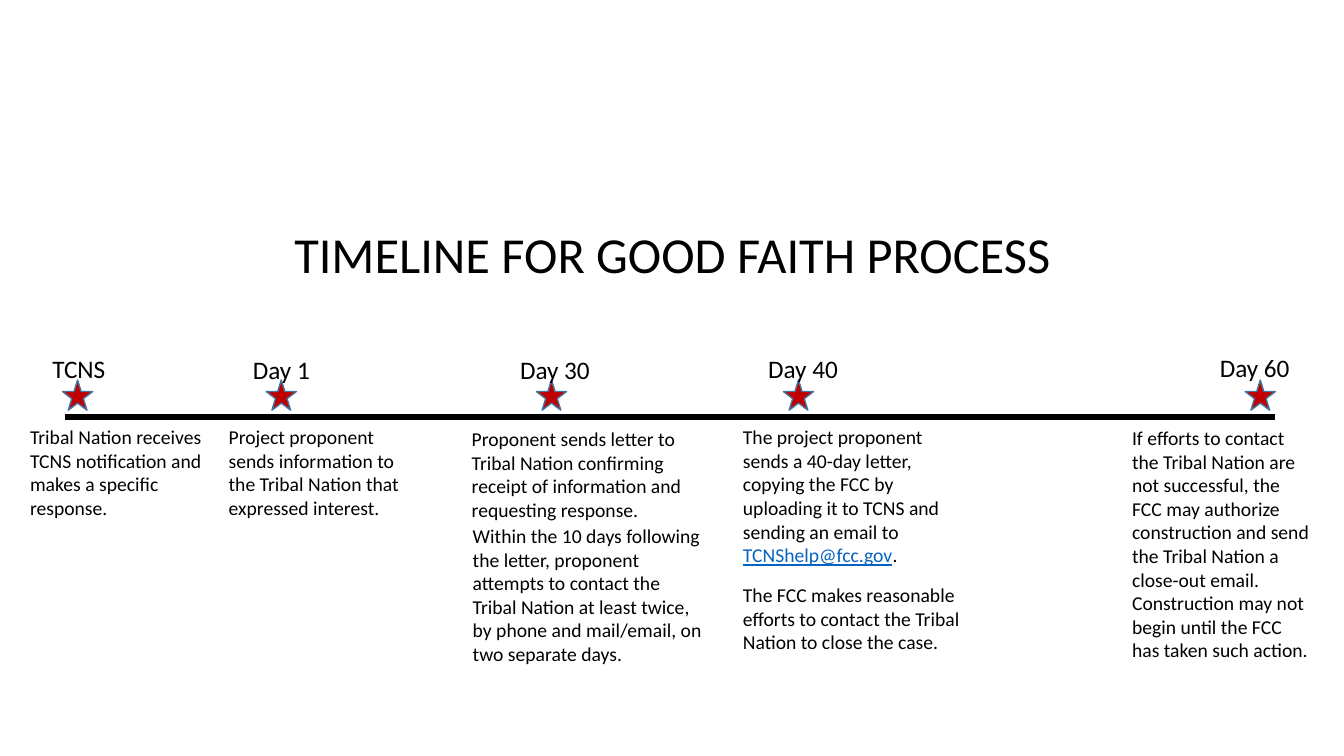
from lxml import etree
from pptx import Presentation
from pptx.dml.color import RGBColor
from pptx.enum.shapes import MSO_CONNECTOR, MSO_SHAPE
from pptx.enum.text import MSO_ANCHOR, PP_ALIGN
from pptx.oxml.ns import qn
from pptx.util import Inches, Pt

COLORS = {"text": "000000", "star": "C00000", "star_edge": "43739E", "link": "0563C1"}
STAR_SIZE, STAR_TOP, LINE_Y = 0.3, 3.77, 4.14
EMAIL = "TCNShelp@fcc.gov"

# label, star left, label box (left, top, width)
milestones = [
    ("TCNS", 0.62, (0.42, 3.46, 0.78)),
    ("Day 1", 2.64, (2.41, 3.47, 0.83)),
    ("Day 30", 5.32, (5.06, 3.47, 1.14)),
    ("Day 40", 7.77, (7.52, 3.46, 0.99)),
    ("Day 60", 12.35, (12, 3.45, 1.06)),
]

# box (left, top, width, height), paragraphs as lists of runs
descriptions = [
    ((0.2, 4.17, 2, 1.04), [
        ["Tribal Nation receives TCNS notification and"],
        ["makes a specific response."]]),
    ((2.17, 4.17, 2.07, 1.04), [
        ["Project proponent sends information to the Tribal Nation that expressed interest."]]),
    ((4.58, 4.19, 2.65, 1.04), [
        ["Proponent sends letter to Tribal Nation confirming receipt of information "
         "and requesting response."]]),
    ((4.59, 5.15, 2.52, 1.51), [
        ["Within the 10 days following the letter, proponent attempts to contact the Tribal "
         "Nation at least twice, by phone and mail/email, on two separate days."]]),
    ((7.27, 4.17, 2.41, 2.46), [
        ["The project proponent sends a 40-day letter, copying the FCC by uploading it "
         "to TCNS and sending an email to ", EMAIL, "."],
        ["The FCC makes reasonable efforts to contact the Tribal Nation to close the case."]]),
    ((11.13, 4.18, 2, 2.46), [
        ["If efforts to contact the Tribal Nation are not successful, the FCC may authorize "
         "construction and send the Tribal Nation a close-out email. Construction may not "
         "begin until the FCC has taken such action."]]),
]


def color(name):
    return RGBColor.from_string(COLORS[name])


def add_text(place, paragraphs, size):
    """Add a wrapping text box; each paragraph is a list of run texts."""
    frame = page.shapes.add_textbox(*map(Inches, place)).text_frame
    frame.word_wrap = True
    for index, texts in enumerate(paragraphs):
        para = frame.add_paragraph() if index else frame.paragraphs[0]
        for text in texts:
            span = para.add_run()
            span.text = text
            span.font.name = "Calibri"
            span.font.size = Pt(size)
            span.font.color.rgb = color("link" if text == EMAIL else "text")
            span.font.underline = text == EMAIL
    return frame


deck = Presentation()
deck.slide_width, deck.slide_height = Inches(13.33), Inches(7.5)
page = deck.slides.add_slide(deck.slide_layouts[6])

title = add_text((1.67, 1.23, 10, 1.64), [["TIMELINE FOR GOOD FAITH PROCESS"]], 36)
title.vertical_anchor = MSO_ANCHOR.BOTTOM
title.paragraphs[0].alignment = PP_ALIGN.CENTER
title.paragraphs[0].line_spacing = 0.9

timeline = page.shapes.add_connector(
    MSO_CONNECTOR.STRAIGHT, Inches(0.64), Inches(LINE_Y), Inches(12.65), Inches(LINE_Y))
timeline.line.color.rgb = color("text")
timeline.line.width = Pt(4.5)
etree.SubElement(timeline._element.spPr, qn("a:effectLst"))

for label, star_left, (left, top, width) in milestones:
    star = page.shapes.add_shape(
        MSO_SHAPE.STAR_5_POINT, Inches(star_left), Inches(STAR_TOP),
        Inches(STAR_SIZE), Inches(STAR_SIZE))
    star.shadow.inherit = False
    star.fill.solid()
    star.fill.fore_color.rgb = color("star")
    star.line.color.rgb = color("star_edge")
    star.line.width = Pt(1)
    add_text((left, top, width, 0.4), [[label]], 18)

for place, paragraphs in descriptions:
    frame = add_text(place, paragraphs, 14)
    if EMAIL in paragraphs[0]:
        frame.paragraphs[1].space_before = Pt(12)

deck.save("out.pptx")
